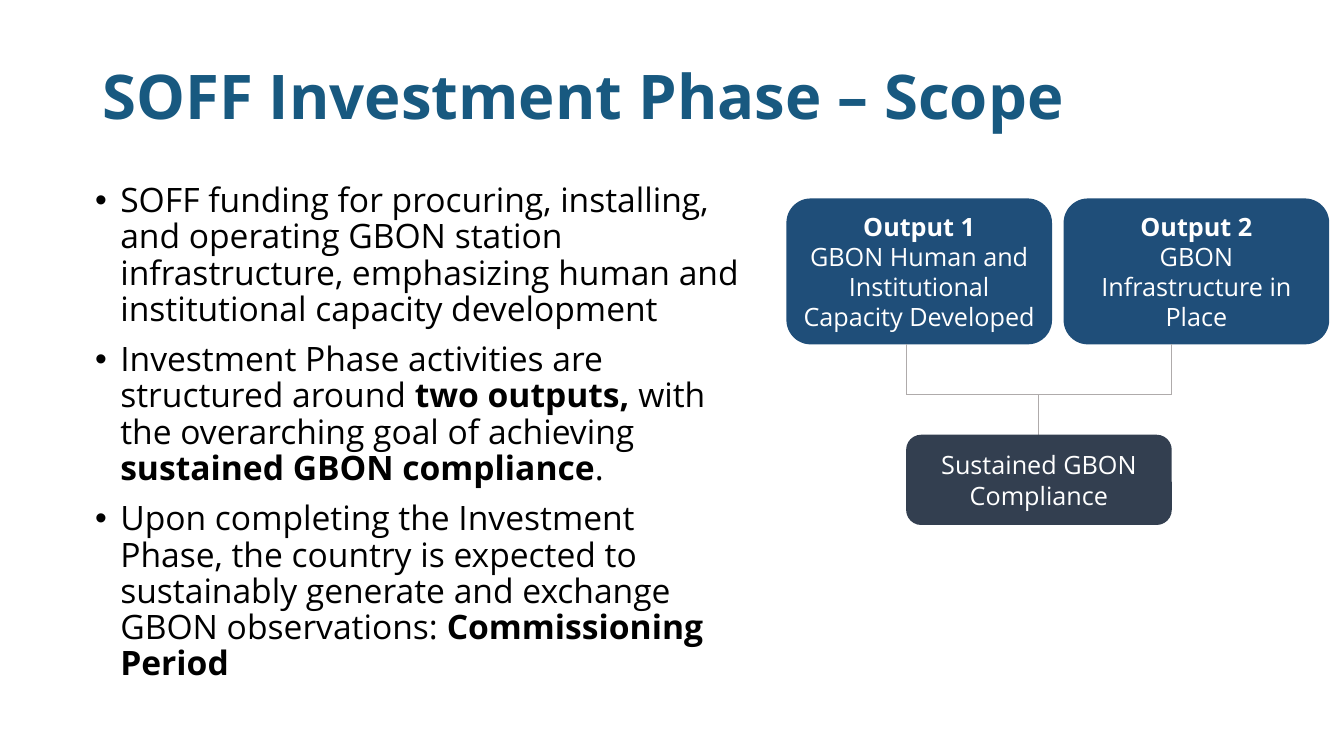
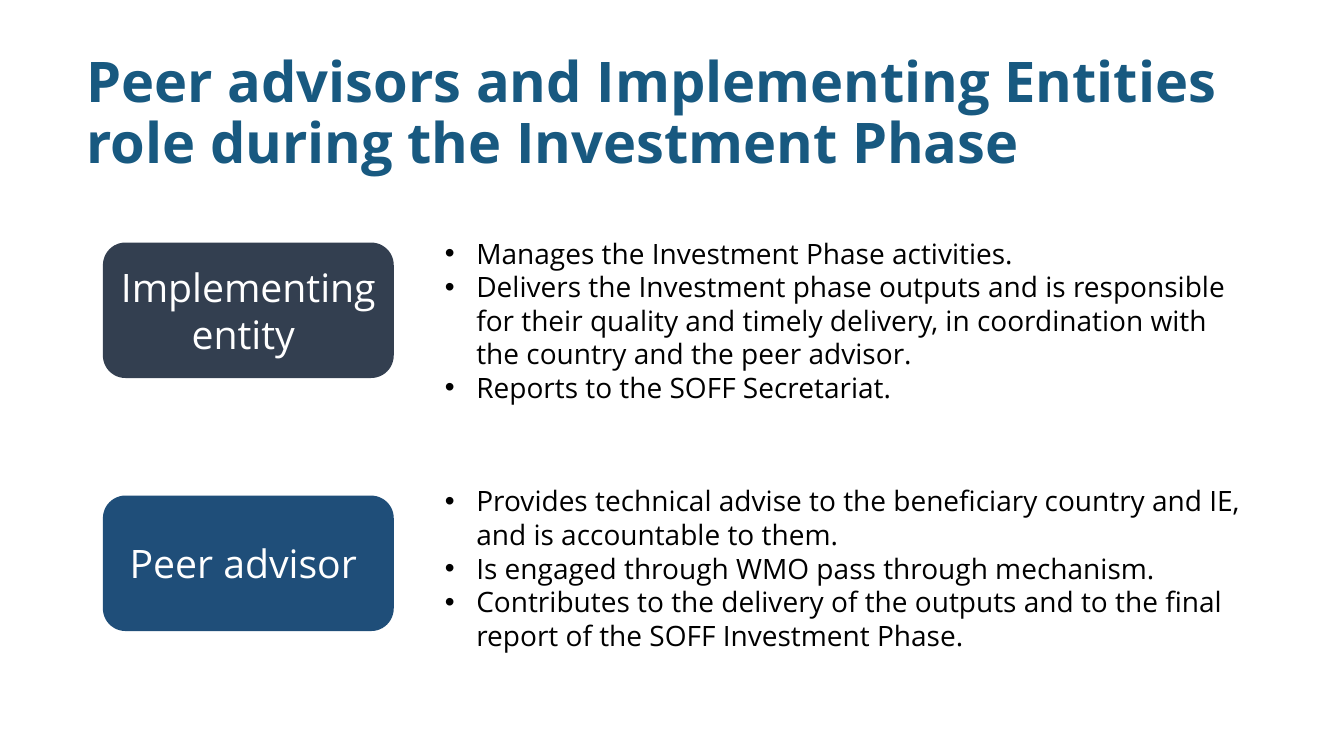
"""Build two slides on the scope and the roles of the SOFF Investment Phase."""
from dataclasses import dataclass
from typing import NamedTuple

from lxml.etree import SubElement
from pptx import Presentation
from pptx.dml.color import RGBColor
from pptx.enum.shapes import MSO_CONNECTOR as Connector, MSO_SHAPE as Preset
from pptx.enum.text import MSO_ANCHOR as Anchor, MSO_AUTO_SIZE as AutoSize, PP_ALIGN as Align
from pptx.oxml.ns import qn
from pptx.shapes.base import BaseShape
from pptx.slide import Slide
from pptx.text.text import Font
from pptx.util import Emu, Pt

EMU_PER_PX = 9525
FONT = "Open Sans"
TITLE_BLUE = "185980"
BOX_BLUE = "1F4E79"
BOX_SLATE = "333F50"
LINE_GREY = "AFABAB"
WHITE = "FFFFFF"
BLACK = "000000"
TITLE_AND_CONTENT, TWO_CONTENT = 1, 3


class Area(NamedTuple):
    left: int
    top: int
    width: int
    height: int

    @property
    def right(self) -> int:
        return self.left + self.width

    @property
    def bottom(self) -> int:
        return self.top + self.height


class Span(NamedTuple):
    text: str
    bold: bool = False


@dataclass(frozen=True)
class ListStyle:
    size: int
    indent: int
    line_spacing: float
    space_before: int


@dataclass(frozen=True)
class Box:
    area: Area
    text: str
    fill: str
    size: int
    bold_first: bool = False


@dataclass(frozen=True)
class Role:
    box: Box
    list_area: Area
    duties: list[list[Span]]


SCOPE_LIST = ListStyle(size=24, indent=24, line_spacing=0.9, space_before=10)
DUTY_LIST = ListStyle(size=20, indent=30, line_spacing=1.0, space_before=0)

SCOPE_ITEMS = [
    [Span("SOFF funding for procuring, installing, and operating GBON station "
          "infrastructure, emphasizing human and institutional capacity development")],
    [Span("Investment Phase activities are structured around "),
     Span("two outputs, ", True),
     Span("with the overarching goal of achieving "),
     Span("sustained GBON compliance", True),
     Span(".")],
    [Span("Upon completing the Investment Phase, the country is expected to "
          "sustainably generate and exchange GBON observations: "),
     Span("Commissioning Period", True)],
]
OUTPUTS = [
    "Output 1\vGBON Human and Institutional Capacity Developed",
    "Output 2\vGBON Infrastructure in Place",
]
FIRST_OUTPUT = Area(749, 189, 253, 139)
OUTPUT_GAP = 11
GOAL = Box(Area(863, 414, 253, 86), "Sustained GBON Compliance", BOX_SLATE, 18)
JOIN_TOP = 376

ROLES = [
    Role(Box(Area(98, 231, 277, 129), "Implementing entity ", BOX_SLATE, 28),
         Area(414, 220, 778, 204),
         [[Span("Manages the Investment Phase activities.")],
          [Span("Delivers the Investment phase outputs and is responsible for their quality "
                "and timely delivery, in coordination with the country and the peer advisor.")],
          [Span("Reports to the SOFF Secretariat.")]]),
    Role(Box(Area(98, 472, 277, 129), "Peer advisor ", BOX_BLUE, 28),
         Area(414, 456, 798, 264),
         [[Span("Provides technical advise to the beneficiary country and IE, "
                "and is accountable to them.")],
          [Span("Is engaged through WMO pass through mechanism.")],
          [Span("Contributes to the delivery of the outputs and to the final report "
                "of the SOFF Investment Phase.")]]),
]


def px(length: int) -> Emu:
    """Turn pixels into EMU."""
    return Emu(length * EMU_PER_PX)


def color(value: str) -> RGBColor:
    """Turn a hex string into a colour."""
    return RGBColor.from_string(value)


def style_font(font: Font, size: int, ink: str, bold: bool = False) -> None:
    """Give a run the shared typeface with its size, colour and weight."""
    font.name = FONT
    font.size = Pt(size)
    font.bold = bold
    font.color.rgb = color(ink)


def place(shape: BaseShape, area: Area) -> None:
    """Move and size a shape."""
    shape.left, shape.top, shape.width, shape.height = map(px, area)


def fill_title(page: Slide, text: str, area: Area, size: int) -> None:
    """Write the slide title in the shared style."""
    title = page.shapes.title
    place(title, area)
    frame = title.text_frame
    frame.text = text
    frame.word_wrap = True
    frame.auto_size = AutoSize.NONE
    frame.vertical_anchor = Anchor.MIDDLE
    para = frame.paragraphs[0]
    para.alignment = Align.LEFT
    para.line_spacing = 0.9
    style_font(para.runs[0].font, size, TITLE_BLUE, True)


def fill_list(body: BaseShape, area: Area, items: list[list[Span]], style: ListStyle) -> None:
    """Write a bulleted list into a body placeholder."""
    place(body, area)
    frame = body.text_frame
    frame.word_wrap = True
    frame.auto_size = AutoSize.NONE
    frame.vertical_anchor = Anchor.TOP
    for index, spans in enumerate(items):
        para = frame.add_paragraph() if index else frame.paragraphs[0]
        para.alignment = Align.LEFT
        para.line_spacing = style.line_spacing
        para.space_before = Pt(style.space_before)
        properties = para._p.get_or_add_pPr()
        properties.set("marL", str(px(style.indent)))
        properties.set("indent", str(px(-style.indent)))
        SubElement(properties, qn("a:buFont")).set("typeface", "Arial")
        SubElement(properties, qn("a:buChar")).set("char", "•")
        for span in spans:
            run = para.add_run()
            run.text = span.text
            style_font(run.font, style.size, BLACK, span.bold)


def draw_box(page: Slide, box: Box) -> None:
    """Draw a filled rounded box with centred white text."""
    shape = page.shapes.add_shape(Preset.ROUNDED_RECTANGLE, *map(px, box.area))
    shape.shadow.inherit = False
    shape.fill.solid()
    shape.fill.fore_color.rgb = color(box.fill)
    shape.line.fill.background()
    frame = shape.text_frame
    frame.word_wrap = True
    frame.vertical_anchor = Anchor.MIDDLE
    para = frame.paragraphs[0]
    para.text = box.text
    para.alignment = Align.CENTER
    for index, run in enumerate(para.runs):
        style_font(run.font, box.size, WHITE, box.bold_first and index == 0)


def draw_line(page: Slide, start: tuple[int, int], end: tuple[int, int]) -> None:
    """Draw a thin grey connecting line."""
    line = page.shapes.add_connector(Connector.STRAIGHT, *map(px, start + end))
    line.line.color.rgb = color(LINE_GREY)
    line.line.width = Pt(0.5)
    SubElement(line._element.spPr, qn("a:effectLst"))


def build_scope(deck: Presentation) -> None:
    """Build the scope slide with its list and output diagram."""
    page = deck.slides.add_slide(deck.slide_layouts[TITLE_AND_CONTENT])
    fill_title(page, "SOFF Investment Phase – Scope", Area(88, 25, 1179, 139), 44)
    fill_list(page.placeholders[1], Area(81, 170, 637, 488), SCOPE_ITEMS, SCOPE_LIST)
    for index, text in enumerate(OUTPUTS):
        left = FIRST_OUTPUT.left + index * (FIRST_OUTPUT.width + OUTPUT_GAP)
        draw_box(page, Box(FIRST_OUTPUT._replace(left=left), text, BOX_BLUE, 18, True))
    goal = GOAL.area
    for side in (goal.left, goal.right):
        draw_line(page, (side, FIRST_OUTPUT.bottom), (side, JOIN_TOP))
    draw_line(page, (goal.left, JOIN_TOP), (goal.right, JOIN_TOP))
    middle = (goal.left + goal.right) // 2
    draw_line(page, (middle, JOIN_TOP), (middle, goal.top))
    draw_box(page, GOAL)


def build_roles(deck: Presentation) -> None:
    """Build the slide that pairs each role with its duties."""
    page = deck.slides.add_slide(deck.slide_layouts[TWO_CONTENT])
    fill_title(page, "Peer advisors and Implementing Entities role during the Investment Phase",
               Area(73, 40, 1104, 139), 40)
    for number, role in enumerate(ROLES, start=1):
        draw_box(page, role.box)
        fill_list(page.placeholders[number], role.list_area, role.duties, DUTY_LIST)


def main() -> None:
    """Build and save the deck."""
    deck = Presentation()
    deck.slide_width, deck.slide_height = px(1280), px(720)
    build_scope(deck)
    build_roles(deck)
    deck.save("out.pptx")


if __name__ == "__main__":
    main()
